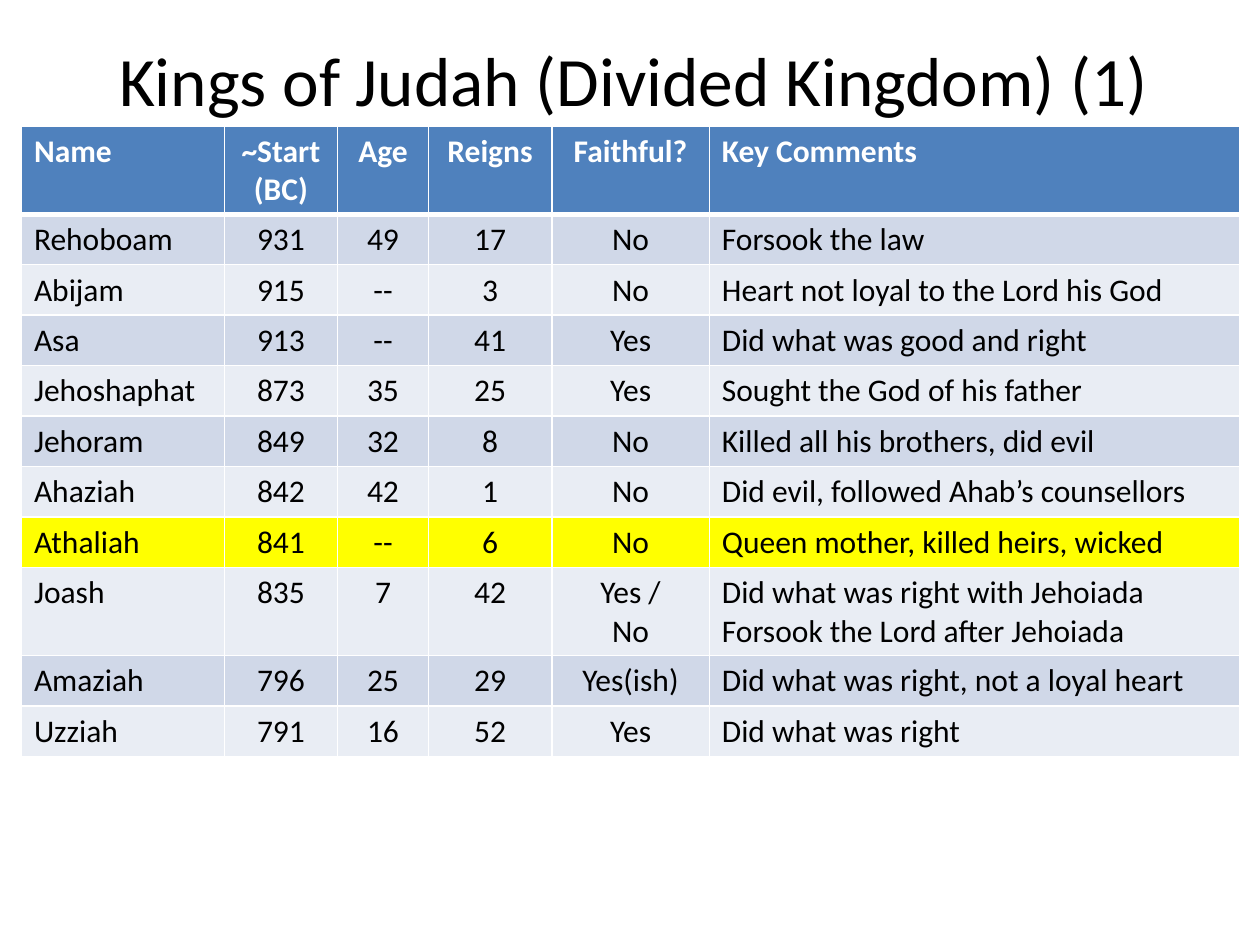
from pptx import Presentation
from pptx import util as u
from pptx.dml import color
from pptx.enum import text
from pptx.oxml import ns
from lxml import etree

COLORS = {
    "header": "4F81BD",
    "band_dark": "D0D8E8",
    "band_light": "E9EDF4",
    "highlight": "FFFF00",
    "ink": "000000",
    "white": "FFFFFF",
}

COLUMN_WIDTHS = [1.61, 0.9, 0.72, 0.98, 1.25, 4.21]
CENTERED_COLUMNS = range(1, 5)
HEADINGS = ["Name", "~Start\n(BC)", "Age", "Reigns", "Faithful?", "Key Comments"]
KINGS = [
    ["Rehoboam", "931", "49", "17", "No", "Forsook the law"],
    ["Abijam", "915", "--", "3", "No", "Heart not loyal to the Lord his God"],
    ["Asa", "913", "--", "41", "Yes", "Did what was good and right"],
    ["Jehoshaphat", "873", "35", "25", "Yes", "Sought the God of his father"],
    ["Jehoram", "849", "32", "8", "No", "Killed all his brothers, did evil"],
    ["Ahaziah", "842", "42", "1", "No", "Did evil, followed Ahab’s counsellors"],
    ["Athaliah", "841", "--", "6", "No", "Queen mother, killed heirs, wicked"],
    ["Joash", "835", "7", "42", "Yes /\nNo",
     "Did what was right with Jehoiada\nForsook the Lord after Jehoiada"],
    ["Amaziah", "796", "25", "29", "Yes(ish)", "Did what was right, not a loyal heart"],
    ["Uzziah", "791", "16", "52", "Yes", "Did what was right"],
]
QUEEN = "Athaliah"


class SlideBuilder:
    font_name = "Calibri"
    title_size = 39.6
    table_size = 18

    def __init__(self, slide):
        self.slide = slide

    def rgb(self, name):
        return color.RGBColor.from_string(COLORS[name])

    def style_text(self, frame, size, ink, centered, bold=False):
        for paragraph in frame.paragraphs:
            paragraph.alignment = (
                text.PP_ALIGN.CENTER if centered else text.PP_ALIGN.LEFT
            )
            for run in paragraph.runs:
                run.font.name = self.font_name
                run.font.size = u.Pt(size)
                run.font.bold = bold
                run.font.color.rgb = self.rgb(ink)

    def title(self, words, left, top, width, height):
        box = self.slide.shapes.add_textbox(
            u.Inches(left), u.Inches(top), u.Inches(width), u.Inches(height)
        )
        frame = box.text_frame
        frame.word_wrap = True
        frame.vertical_anchor = text.MSO_ANCHOR.MIDDLE
        frame.text = words
        self.style_text(frame, self.title_size, "ink", centered=True)

    def borders(self, cell, top, bottom):
        # Borders come before the fill in the cell properties
        properties = cell._tc.get_or_add_tcPr()
        widths = {"lnL": 1, "lnR": 1, "lnT": top, "lnB": bottom}
        for position, (side, points) in enumerate(widths.items()):
            line = etree.Element(ns.qn(f"a:{side}"), w=str(u.Pt(points)))
            fill = etree.SubElement(line, ns.qn("a:solidFill"))
            etree.SubElement(fill, ns.qn("a:srgbClr"), val=COLORS["white"])
            properties.insert(position, line)

    def cell(self, cell, words, fill, centered, header, top, bottom):
        cell.text_frame.text = words
        ink = "white" if header else "ink"
        self.style_text(cell.text_frame, self.table_size, ink, centered, header)
        cell.fill.solid()
        cell.fill.fore_color.rgb = self.rgb(fill)
        self.borders(cell, top, bottom)

    def table(self, rows, left, top):
        # Rows with a second line are taller
        heights = [0.7 if any("\n" in words for words in row) else 0.4 for row in rows]
        table = self.slide.shapes.add_table(
            len(rows), len(COLUMN_WIDTHS), u.Inches(left), u.Inches(top),
            u.Inches(sum(COLUMN_WIDTHS)), u.Inches(sum(heights)),
        ).table
        for column, width in zip(table.columns, COLUMN_WIDTHS):
            column.width = u.Inches(width)
        for r, (row, height) in enumerate(zip(rows, heights)):
            table.rows[r].height = u.Inches(height)
            if r == 0:
                fill = "header"
            elif row[0] == QUEEN:
                fill = "highlight"
            else:
                fill = "band_dark" if r % 2 else "band_light"
            for c, words in enumerate(row):
                self.cell(
                    table.cell(r, c), words, fill,
                    centered=c in CENTERED_COLUMNS, header=r == 0,
                    top=3 if r == 1 else 1, bottom=3 if r == 0 else 1,
                )


def main():
    deck = Presentation()
    deck.slide_width, deck.slide_height = u.Inches(10), u.Inches(7.5)
    builder = SlideBuilder(deck.slides.add_slide(deck.slide_layouts[6]))

    # Heading
    builder.title("Kings of Judah (Divided Kingdom) (1)", 0.53, 0, 9, 1.25)

    # Table of kings
    builder.table([HEADINGS, *KINGS], 0.17, 1)

    deck.save("out.pptx")


if __name__ == "__main__":
    main()
